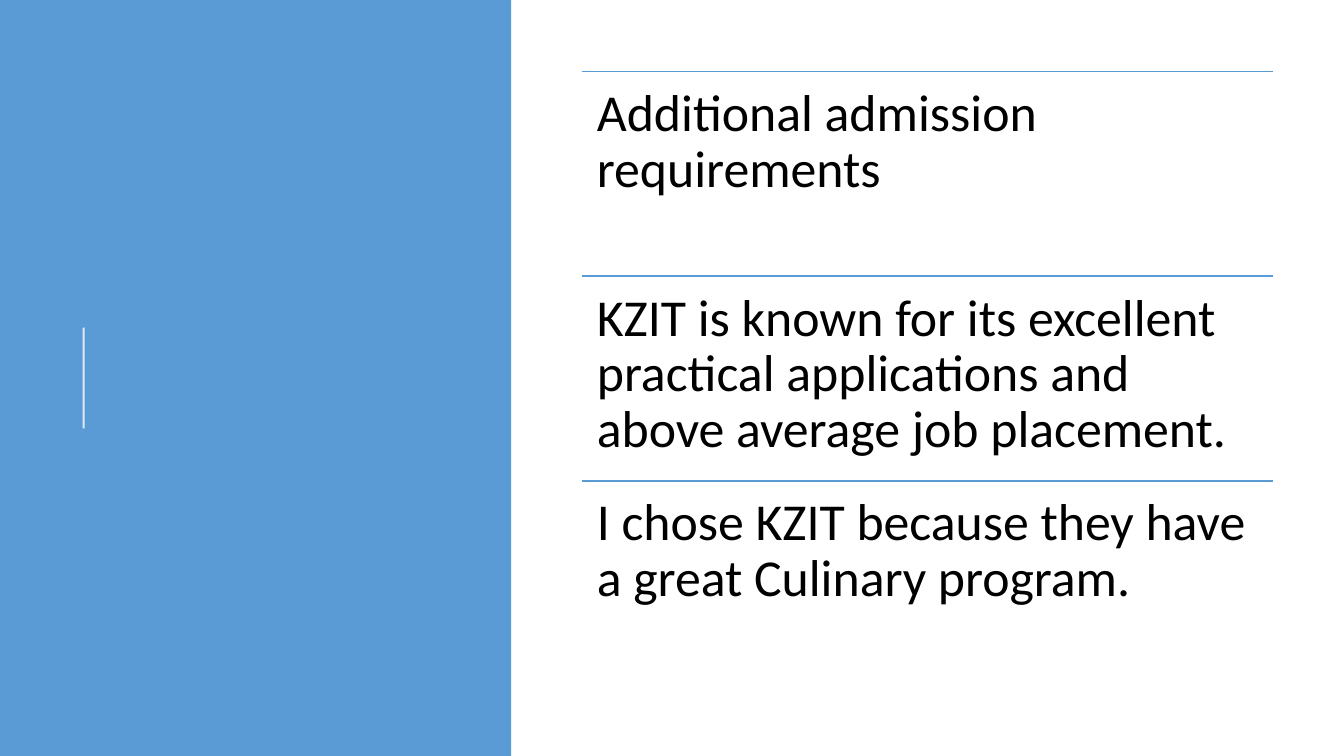
from dataclasses import dataclass

from lxml.etree import SubElement
from pptx import Presentation
from pptx.dml.color import RGBColor
from pptx.enum.shapes import MSO_CONNECTOR, MSO_SHAPE
from pptx.oxml.ns import qn
from pptx.slide import Slide
from pptx.util import Inches, Pt

COLORS = {"accent": "5B9BD5", "white": "FFFFFF", "text": "000000"}
LEFT, TOP, WIDTH, HEIGHT = 5.77, 0.71, 6.86, 2.03
PITCH = 2.03


@dataclass(frozen=True)
class Rule:
    """A straight line, in inches and points, with its opacity in percent."""
    x1: float
    y1: float
    x2: float
    y2: float
    color: str
    weight: float
    opacity: int = 100


@dataclass(frozen=True)
class Point:
    """A statement and the top of its row in inches."""
    text: str
    top: float


STATEMENTS = (
    "Additional admission requirements",
    "KZIT is known for its excellent practical applications and above average job placement.",
    "I chose KZIT because they have a great Culinary program.",
)


def rgb(name: str) -> RGBColor:
    """Return a named colour."""
    return RGBColor.from_string(COLORS[name])


def add_panel(s: Slide) -> None:
    """Draw the blue side panel."""
    sp = s.shapes.add_shape(MSO_SHAPE.RECTANGLE, 0, 0, Inches(5.07), Inches(7.5))
    sp.shadow.inherit = False
    sp.fill.solid()
    sp.fill.fore_color.rgb = rgb("accent")
    sp.line.fill.background()


def add_rule(s: Slide, rule: Rule) -> None:
    """Draw a rule without a shadow."""
    ends = (Inches(v) for v in (rule.x1, rule.y1, rule.x2, rule.y2))
    cxn = s.shapes.add_connector(MSO_CONNECTOR.STRAIGHT, *ends)
    cxn.line.color.rgb = rgb(rule.color)
    cxn.line.width = Pt(rule.weight)
    if rule.opacity < 100:
        clr = cxn.line._ln.find(".//" + qn("a:srgbClr"))
        SubElement(clr, qn("a:alpha"), val=str(rule.opacity * 1000))
    SubElement(cxn._element.spPr, qn("a:effectLst"))


def add_point(s: Slide, point: Point) -> None:
    """Draw a statement under its rule."""
    add_rule(s, Rule(LEFT, point.top, LEFT + WIDTH, point.top, "accent", 1.1))
    box = s.shapes.add_textbox(Inches(LEFT), Inches(point.top), Inches(WIDTH), Inches(HEIGHT))
    tf = box.text_frame
    tf.word_wrap = True
    tf.margin_left = tf.margin_right = tf.margin_top = tf.margin_bottom = Inches(0.15)
    tf.text = point.text
    p = tf.paragraphs[0]
    p.line_spacing = 0.9
    r = p.runs[0]
    r.font.name = "Calibri"
    r.font.size = Pt(37)
    r.font.color.rgb = rgb("text")


def main() -> None:
    """Build and save the slide."""
    prs = Presentation()
    prs.slide_width, prs.slide_height = Inches(13.33), Inches(7.5)
    s = prs.slides.add_slide(prs.slide_layouts[6])
    add_panel(s)
    add_rule(s, Rule(0.83, 4.25, 0.83, 3.25, "white", 1.5, 80))
    for i, text in enumerate(STATEMENTS):
        add_point(s, Point(text, TOP + i * PITCH))
    prs.save("out.pptx")


if __name__ == "__main__":
    main()
